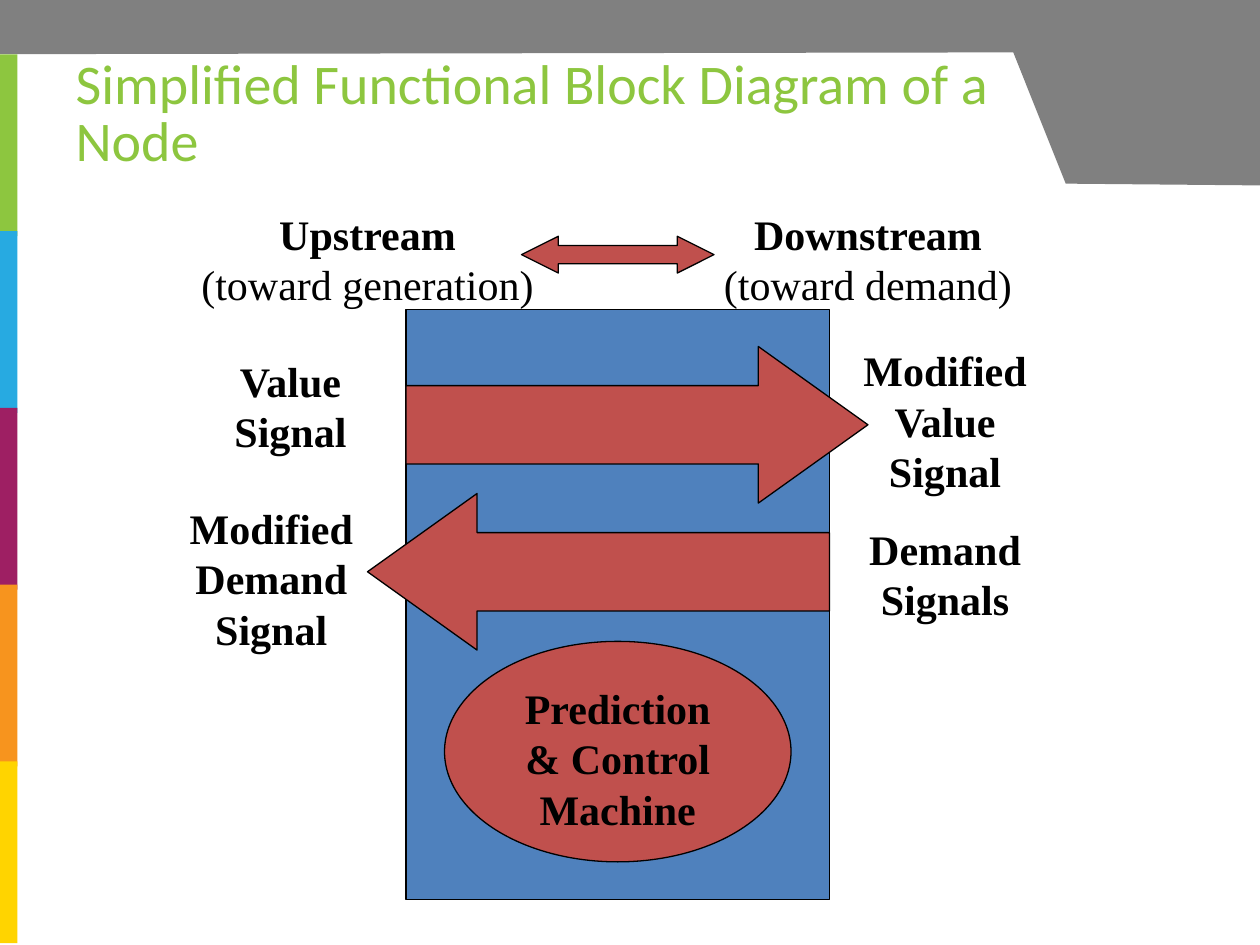
from pptx import Presentation
from pptx.dml.color import RGBColor
from pptx.enum.shapes import MSO_SHAPE
from pptx.enum.text import MSO_ANCHOR, PP_ALIGN
from pptx.util import Pt

RECT = MSO_SHAPE.RECTANGLE
RIGHT = MSO_SHAPE.RIGHT_ARROW
LEFT = MSO_SHAPE.LEFT_ARROW
BOTH = MSO_SHAPE.LEFT_RIGHT_ARROW
OVAL = MSO_SHAPE.OVAL
TOP = MSO_ANCHOR.TOP
MIDDLE = MSO_ANCHOR.MIDDLE
CENTER = PP_ALIGN.CENTER
START = PP_ALIGN.LEFT

GREEN, RED, BLUE, GREY, BLACK = "8DC63F", "C0504D", "4F81BD", "808080", "000000"
BARS = [GREEN, "27AAE1", "9E1F63", "F7941E", "FFD400"]

FRAME = {"word_wrap": True, "vertical_anchor": TOP, "margin_top": Pt(5)}
PARA = {"alignment": CENTER, "line_spacing": Pt(28.8)}
FONT = {"name": "Times New Roman", "size": Pt(24)}
HEAD = {"name": "Calibri", "size": Pt(32), "bold": False}

BAND = [(0, 31), (579, 30.4), (609, 105.4), (720.6, 105.8), (720.6, -0.6), (-0.6, -2)]

LABELS = [
    (["Upstream", "(toward generation)"], (100, 114, 220, 63)),
    (["Downstream", "(toward demand)"], (386, 114, 220, 63)),
    (["Value Signal"], (100, 198, 132, 84)),
    (["Demand Signals"], (474, 294, 132, 84)),
    (["Modified Demand Signal"], (78, 282, 154, 84)),
    (["Modified Value Signal"], (474, 192, 132, 84)),
]


def color(text):
    return RGBColor.from_string(text)


def apply(item, values):
    for key, value in values.items():
        setattr(item, key, value)


def paint(shape, fill, line=None):
    shape.shadow.inherit = False
    shape.fill.solid()
    shape.fill.fore_color.rgb = color(fill)
    if line:
        shape.line.color.rgb = color(line)
        shape.line.width = Pt(0.75)
    else:
        shape.line.fill.background()


def block(slide, kind, box, fill, line=BLACK, adjust=()):
    shape = slide.shapes.add_shape(kind, *map(Pt, box))
    paint(shape, fill, line)
    for i, value in enumerate(adjust):
        shape.adjustments[i] = value
    return shape


def write(shape, lines):
    frame = shape.text_frame
    apply(frame, FRAME)
    frame.text = "\n".join(lines)
    for i, para in enumerate(frame.paragraphs):
        apply(para, PARA)
        apply(para.font, {**FONT, "bold": i == 0})
        para.font.color.rgb = color(BLACK)


def label(slide, lines, box):
    write(slide.shapes.add_textbox(*map(Pt, box)), lines)


def title(slide, text):
    shape = slide.shapes.title
    apply(shape, {"left": Pt(36), "top": Pt(30), "width": Pt(541), "height": Pt(72)})
    frame = shape.text_frame
    apply(frame, {"word_wrap": True, "vertical_anchor": MIDDLE})
    frame.text = text
    para = frame.paragraphs[0]
    apply(para, {"alignment": START, "line_spacing": 0.85})
    apply(para.font, HEAD)
    para.font.color.rgb = color(GREEN)


def frame_art(slide):
    pen = slide.shapes.build_freeform(*BAND[0], scale=Pt(1))
    pen.add_line_segments(BAND[1:], close=True)
    paint(pen.convert_to_shape(), GREY)
    for i, fill in enumerate(BARS):
        block(slide, RECT, (0, 31 + 101 * i, 10, 104), fill, None)


def main():
    deck = Presentation()
    apply(deck, {"slide_width": Pt(720), "slide_height": Pt(540)})
    slide = deck.slides.add_slide(deck.slide_layouts[5])
    frame_art(slide)
    title(slide, "Simplified Functional Block Diagram of a Node")
    for lines, box in LABELS:
        label(slide, lines, box)
    block(slide, RECT, (232, 177, 242, 337), BLUE)
    block(slide, RIGHT, (232, 198, 264, 89.5), RED, adjust=(0.5, 0.7))
    block(slide, LEFT, (210, 282, 264, 89.5), RED, adjust=(0.5, 0.7))
    oval = block(slide, OVAL, (254, 366.5, 198, 126), RED)
    write(oval, ["Prediction & Control Machine"])
    block(slide, BOTH, (298, 135, 110, 21), RED, adjust=(0.5, 1))
    deck.save("out.pptx")


if __name__ == "__main__":
    main()
